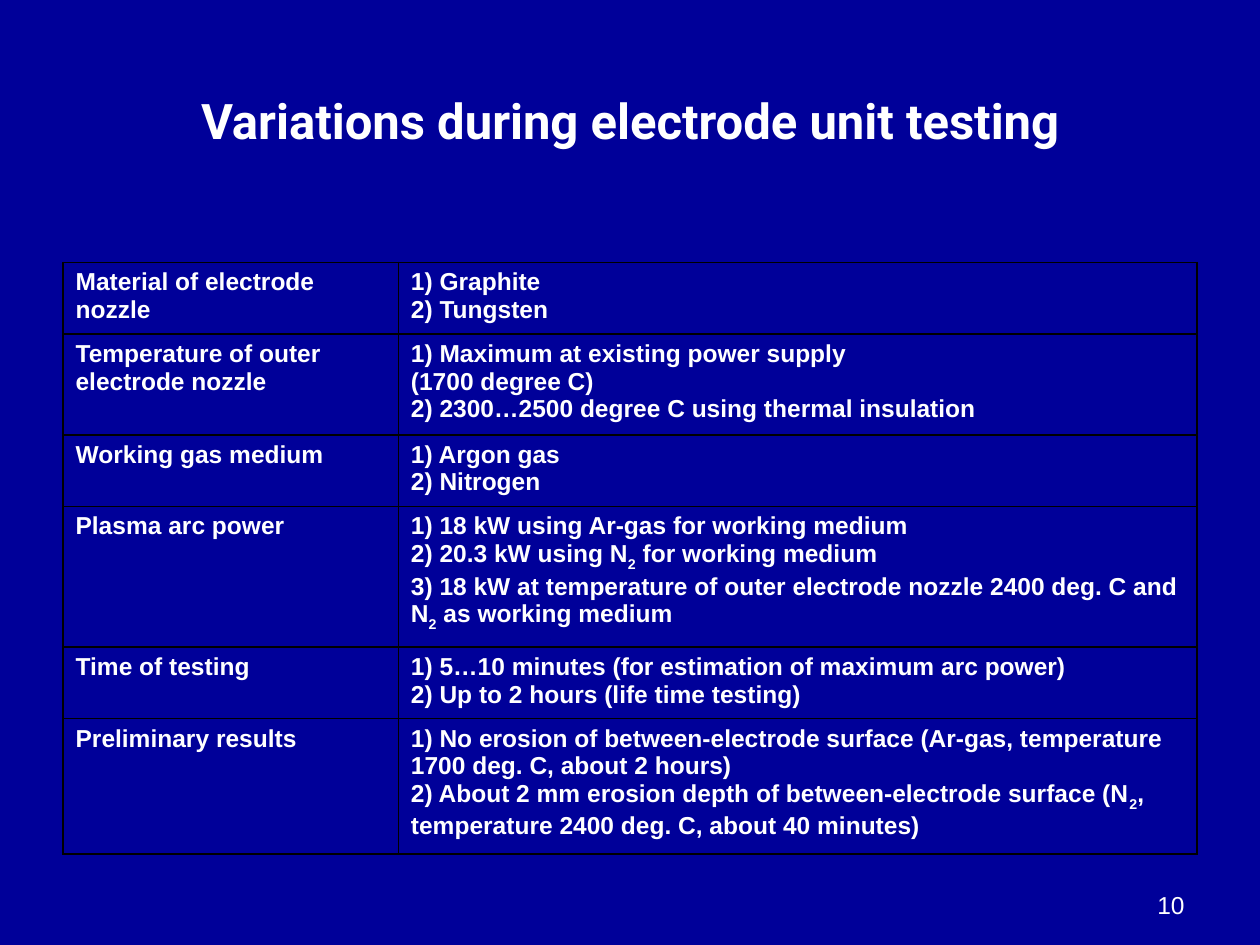
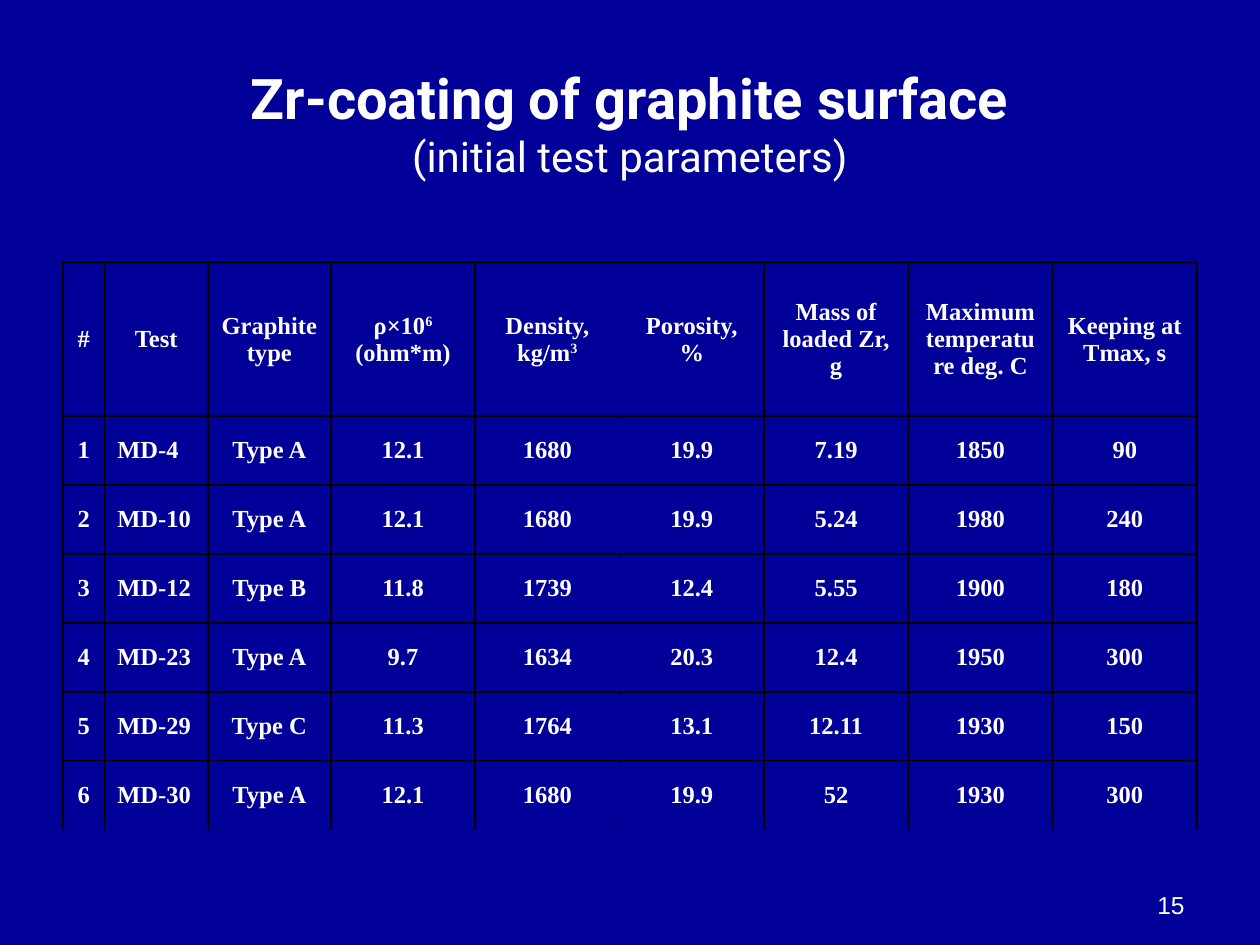
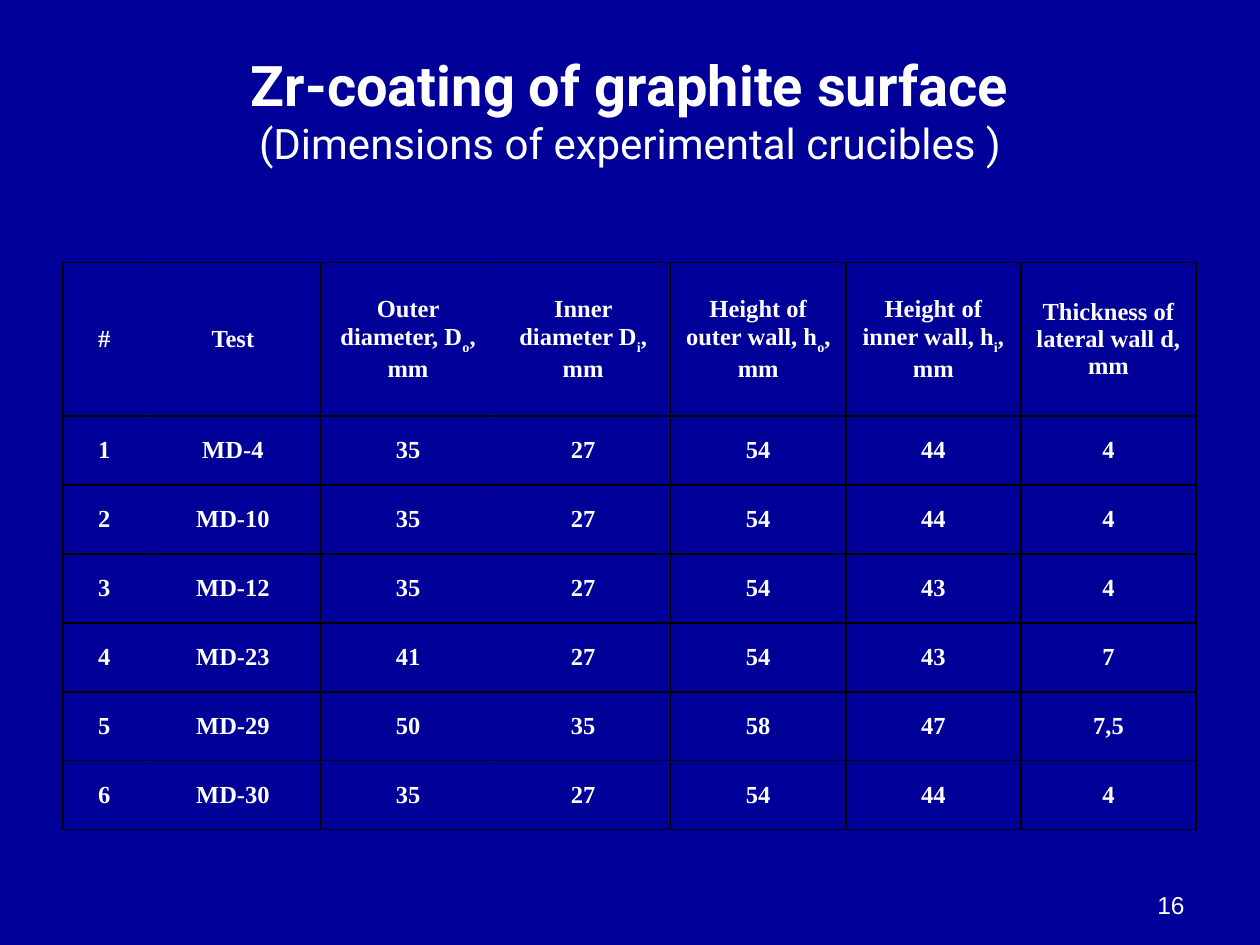
from copy import deepcopy
from dataclasses import dataclass

from lxml import etree
from pptx import Presentation
from pptx.dml.color import RGBColor
from pptx.enum.text import MSO_ANCHOR, MSO_AUTO_SIZE, PP_ALIGN
from pptx.oxml.ns import qn
from pptx.util import Cm, Pt

LEFT, CENTER, RIGHT = PP_ALIGN.LEFT, PP_ALIGN.CENTER, PP_ALIGN.RIGHT
TOP, MIDDLE, BOTTOM = MSO_ANCHOR.TOP, MSO_ANCHOR.MIDDLE, MSO_ANCHOR.BOTTOM
NO_AUTOFIT = MSO_AUTO_SIZE.NONE
TITLE_ONLY = 5
BASELINES = {"_": "-30000", "^": "30000"}


@dataclass(frozen=True)
class Theme:
    background: str = "000099"
    text: str = "FFFFFF"
    border: str = "000000"
    border_width: float = 1
    title_font: str = "Roboto"
    body_font: str = "Arial"
    data_font: str = "Times New Roman"
    title_size: int = 28
    big_title_size: int = 32
    subtitle_size: int = 24
    body_size: int = 14
    margin: float = 1.27
    width: float = 22.86
    table_top: float = 5.29


def write(p, text, *, font, size, color, bold=False, align=None):
    """Add text to a paragraph; |_x| is a subscript, |^x| a superscript."""
    if align is not None:
        p.alignment = align
    for i, part in enumerate(text.split("|")):
        baseline = BASELINES[part[0]] if i % 2 else None
        lines = (part[1:] if baseline else part).split("\n")
        for n, line in enumerate(lines):
            if n:
                p.add_line_break()
                p._p[-1].append(deepcopy(r.font._element))
            if not line:
                continue
            r = p.add_run()
            r.text = line
            r.font.name, r.font.size, r.font.bold = font, Pt(size), bold
            r.font.color.rgb = RGBColor.from_string(color)
            if baseline:
                r.font._element.set("baseline", baseline)


def number_paragraph(p):
    pPr = p._p.get_or_add_pPr()
    pPr.set("marL", "0")
    pPr.set("indent", "0")
    etree.SubElement(pPr, qn("a:buAutoNum"), type="arabicParenR")


class Deck:
    def __init__(self, theme):
        self.theme = theme
        self.prs = Presentation()
        self.prs.slide_width, self.prs.slide_height = Cm(25.4), Cm(19.05)
        fill = self.prs.slide_master.background.fill
        fill.solid()
        fill.fore_color.rgb = RGBColor.from_string(theme.background)

    def add_slide(self, number):
        self.s = self.prs.slides.add_slide(self.prs.slide_layouts[TITLE_ONLY])
        t = self.theme
        sp = self.s.shapes.add_textbox(Cm(18.21), Cm(17.35), Cm(5.92), Cm(1.32))
        tf = sp.text_frame
        tf.word_wrap, tf.vertical_anchor = True, BOTTOM
        write(tf.paragraphs[0], str(number), font=t.body_font, size=t.body_size,
              color=t.text, align=RIGHT)

    def title(self, text, top, height, size, subtitle=None, bottom_inset=0.13):
        t = self.theme
        sp = self.s.shapes.title
        sp.left, sp.top = Cm(t.margin), Cm(top)
        sp.width, sp.height = Cm(t.width), Cm(height)
        tf = sp.text_frame
        tf.auto_size, tf.vertical_anchor = NO_AUTOFIT, MIDDLE
        tf.margin_bottom = Cm(bottom_inset)
        p = tf.paragraphs[0]
        style = dict(font=t.title_font, color=t.text, align=CENTER)
        write(p, text + ("\n" if subtitle else ""), size=size, bold=True, **style)
        if subtitle:
            write(p, subtitle, size=t.subtitle_size, **style)

    def table(self, cols, rows):
        t = self.theme
        frame = self.s.shapes.add_table(
            len(rows), len(cols), Cm(t.margin), Cm(t.table_top),
            Cm(sum(cols)), Cm(sum(rows)))
        table = frame.table
        table.first_row = table.horz_banding = False
        for col, width in zip(table.columns, cols):
            col.width = Cm(width)
        for row, height in zip(table.rows, rows):
            row.height = Cm(height)
        return table

    def cell(self, cell, items, font, anchor=TOP, align=LEFT, numbered=False):
        t = self.theme
        cell.vertical_anchor = anchor
        self.borders(cell)
        cell.fill.background()
        tf = cell.text_frame
        for i, item in enumerate(items):
            p = tf.add_paragraph() if i else tf.paragraphs[0]
            if numbered:
                number_paragraph(p)
                item = " " + item
            write(p, item, font=font, size=t.body_size, color=t.text,
                  bold=True, align=align)
            # The paragraph end sets the minimum row height too
            etree.SubElement(p._p, qn("a:endParaRPr"), sz=str(t.body_size * 100))

    def borders(self, cell):
        tcPr = cell._tc.get_or_add_tcPr()
        for side in ("lnL", "lnR", "lnT", "lnB"):
            ln = etree.SubElement(tcPr, qn(f"a:{side}"),
                                  w=str(Pt(self.theme.border_width)))
            fill = etree.SubElement(ln, qn("a:solidFill"))
            etree.SubElement(fill, qn("a:srgbClr"), val=self.theme.border)

    def list_table(self, cols, heights, rows):
        """Add a table of labels, each with a numbered list beside it."""
        table = self.table(cols, heights)
        font = self.theme.body_font
        for i, (label, items) in enumerate(rows):
            self.cell(table.cell(i, 0), [label], font)
            self.cell(table.cell(i, 1), items, font, numbered=True)

    def data_table(self, cols, header, rows, left_column=None):
        table = self.table(cols, [3.1] + [1.39] * len(rows))
        for i, values in enumerate([header, *rows]):
            for j, value in enumerate(values):
                align = LEFT if i and j == left_column else CENTER
                self.cell(table.cell(i, j), [value], self.theme.data_font,
                          MIDDLE, align)


VARIATIONS = [
    ("Material of electrode nozzle", ["Graphite", "Tungsten"]),
    ("Temperature of outer electrode nozzle",
     ["Maximum at existing power supply\n(1700 degree C)",
      "2300…2500 degree C using thermal insulation"]),
    ("Working gas medium", ["Argon gas", "Nitrogen"]),
    ("Plasma arc power",
     ["18 kW using Ar-gas for working medium",
      "20.3 kW using N|_2| for working medium",
      "18 kW at temperature of outer electrode nozzle 2400 deg. C and "
      "N|_2| as working medium"]),
    ("Time of testing",
     ["5…10 minutes (for estimation of maximum arc power)",
      "Up to 2 hours (life time testing)"]),
    ("Preliminary results",
     ["No erosion of between-electrode surface (Ar-gas, temperature "
      "1700 deg. C, about 2 hours)",
      "About 2 mm erosion depth of between-electrode surface (N|_2|, "
      "temperature 2400 deg. C, about 40 minutes)"]),
]

TESTS = ["MD-4", "MD-10", "MD-12", "MD-23", "MD-29", "MD-30"]

PARAMETER_HEADER = [
    "#", "Test", "Graphite type", "ρ×10|^6|\n(ohm*m)", "Density, kg/m|^3|",
    "Porosity, %", "Mass of loaded Zr, g", "Maximum temperature deg. C",
    "Keeping at Tmax, s"]
PARAMETERS = [
    ["Type A", "12.1", "1680", "19.9", "7.19", "1850", "90"],
    ["Type A", "12.1", "1680", "19.9", "5.24", "1980", "240"],
    ["Type B", "11.8", "1739", "12.4", "5.55", "1900", "180"],
    ["Type A", "9.7", "1634", "20.3", "12.4", "1950", "300"],
    ["Type C", "11.3", "1764", "13.1", "12.11", "1930", "150"],
    ["Type A", "12.1", "1680", "19.9", "52", "1930", "300"],
]

DIMENSION_HEADER = [
    "#", "Test", "Outer diameter, D|_o|, mm", "Inner diameter D|_i|, mm",
    "Height of outer wall, h|_o|, mm", "Height of inner wall, h|_i|, mm",
    "Thickness of lateral wall d, mm"]
DIMENSIONS = [
    ["35", "27", "54", "44", "4"],
    ["35", "27", "54", "44", "4"],
    ["35", "27", "54", "43", "4"],
    ["41", "27", "54", "43", "7"],
    ["50", "35", "58", "47", "7,5"],
    ["35", "27", "54", "44", "4"],
]


def by_test(rows):
    """Put the row number and the test name before each row's values."""
    return [[str(n), test, *values]
            for n, (test, values) in enumerate(zip(TESTS, rows), 1)]


def main():
    theme = Theme()
    deck = Deck(theme)
    coating = "Zr-coating of graphite surface"

    deck.add_slide(10)
    deck.title("Variations during electrode unit testing", 1.32, 2.21,
               theme.title_size)
    deck.list_table([6.76, 16.1], [1.42, 2.01, 1.42, 2.57, 1.42, 2.57], VARIATIONS)

    deck.add_slide(15)
    deck.title(coating, 0.81, 3.3, theme.big_title_size,
               "(initial test parameters)")
    deck.data_table([0.84, 2.08, 2.48] + [2.91] * 6, PARAMETER_HEADER,
                    by_test(PARAMETERS), left_column=1)

    deck.add_slide(16)
    deck.title(coating, 0.81, 3.84, theme.big_title_size,
               "(Dimensions of experimental crucibles )", bottom_inset=1.18)
    deck.data_table([1.66] + [3.53] * 6, DIMENSION_HEADER, by_test(DIMENSIONS))

    deck.prs.save("out.pptx")


if __name__ == "__main__":
    main()
